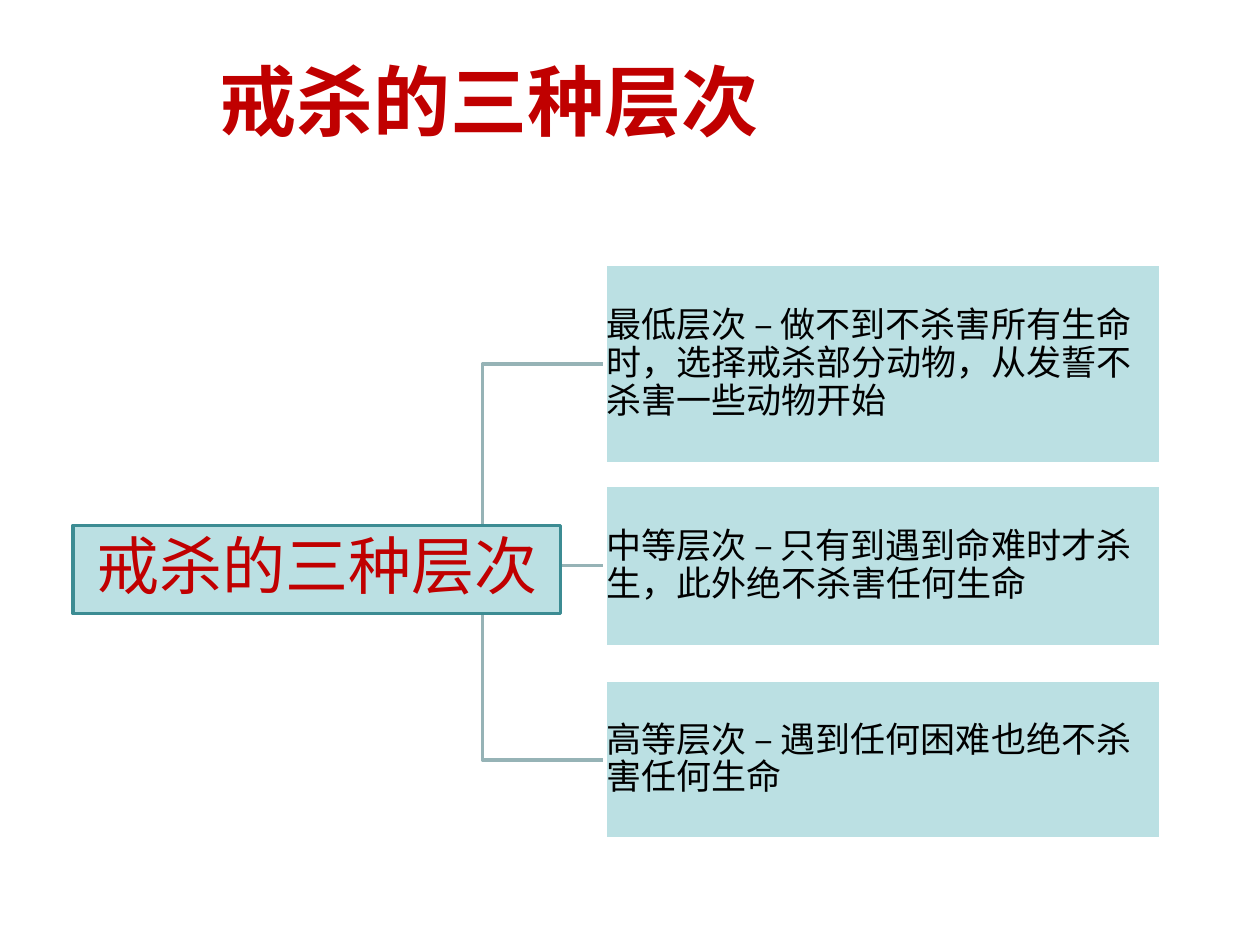
import pptx
import pptx.util
import pptx.dml.color
import pptx.enum.shapes
import pptx.enum.text
import pptx.oxml
import pptx.oxml.ns

Inches, Pt = pptx.util.Inches, pptx.util.Pt
ALIGN = pptx.enum.text.PP_ALIGN
FONT = "Noto Sans CJK SC"
RED, TEAL, PALE, GREY = "C00000", "3C8C93", "BBE0E3", "96B3B6"
HEADING = "戒杀的三种层次"


def color(value):
    return pptx.dml.color.RGBColor.from_string(value)


def write(s, text, align, inset, rgb, spacing=None, **formats):
    tf = s.text_frame
    tf.word_wrap = True
    tf.vertical_anchor = pptx.enum.text.MSO_ANCHOR.MIDDLE
    for side in ("left", "top", "right", "bottom"):
        setattr(tf, "margin_" + side, Inches(inset))
    p = tf.paragraphs[0]
    p.alignment = align
    p.line_spacing = spacing
    r = p.add_run()
    r.text = text
    for name, value in formats.items():
        setattr(r.font, name, value)
    r.font.name = FONT
    r.font.color.rgb = color(rgb)
    # Chinese glyphs use the East Asian font slot
    ea = pptx.oxml.parse_xml(
        f'<a:ea {pptx.oxml.ns.nsdecls("a")} typeface="{FONT}"/>')
    r.font._element.find(pptx.oxml.ns.qn("a:latin")).addnext(ea)


prs = pptx.Presentation()
prs.slide_width, prs.slide_height = Inches(10), Inches(7.5)
slide = prs.slides.add_slide(prs.slide_layouts[5])
shapes = slide.shapes

# Title
title = shapes.title
title.left, title.top = Inches(0.02), Inches(0.17)
title.width, title.height = Inches(7.73), Inches(1.25)
write(title, HEADING, ALIGN.CENTER, 0.05, RED, size=Pt(44), bold=True)

# Levels: top, height, text
levels = [
    (2.1, 1.58, "最低层次 – 做不到不杀害所有生命时，选择戒杀部分动物，从发誓不杀害一些动物开始"),
    (3.85, 1.28, "中等层次 – 只有到遇到命难时才杀生，此外绝不杀害任何生命"),
    (5.4, 1.26, "高等层次 – 遇到任何困难也绝不杀害任何生命"),
]
root_x, root_y, bend_x, level_x = 2.87, 4.52, 3.83, 4.8

# Elbow branches from the root to the middle of each level
for top, height, text in levels:
    mid = top + height / 2
    builder = shapes.build_freeform(Inches(root_x), Inches(root_y))
    builder.add_line_segments(
        [(Inches(x), Inches(y)) for x, y in
         ((bend_x, root_y), (bend_x, mid), (level_x, mid))], close=False)
    s = builder.convert_to_shape()
    s.shadow.inherit = False
    s.fill.background()
    s.line.color.rgb = color(GREY)
    s.line.width = Pt(2)

# Boxes: the root, then the three levels
boxes = [((0.58, 4.17, 3.87, 0.7), TEAL, HEADING, ALIGN.CENTER, 0.03, RED, 36)]
boxes += [((level_x, top, 4.41, height), "FFFFFF", text, ALIGN.LEFT, 0.01, "000000", 20)
          for top, height, text in levels]
for place, outline, text, align, inset, rgb, size in boxes:
    s = shapes.add_shape(pptx.enum.shapes.MSO_SHAPE.RECTANGLE, *map(Inches, place))
    s.shadow.inherit = False
    s.fill.solid()
    s.fill.fore_color.rgb = color(PALE)
    s.line.color.rgb = color(outline)
    s.line.width = Pt(2)
    write(s, text, align, inset, rgb, spacing=0.9, size=Pt(size))

prs.save("out.pptx")
